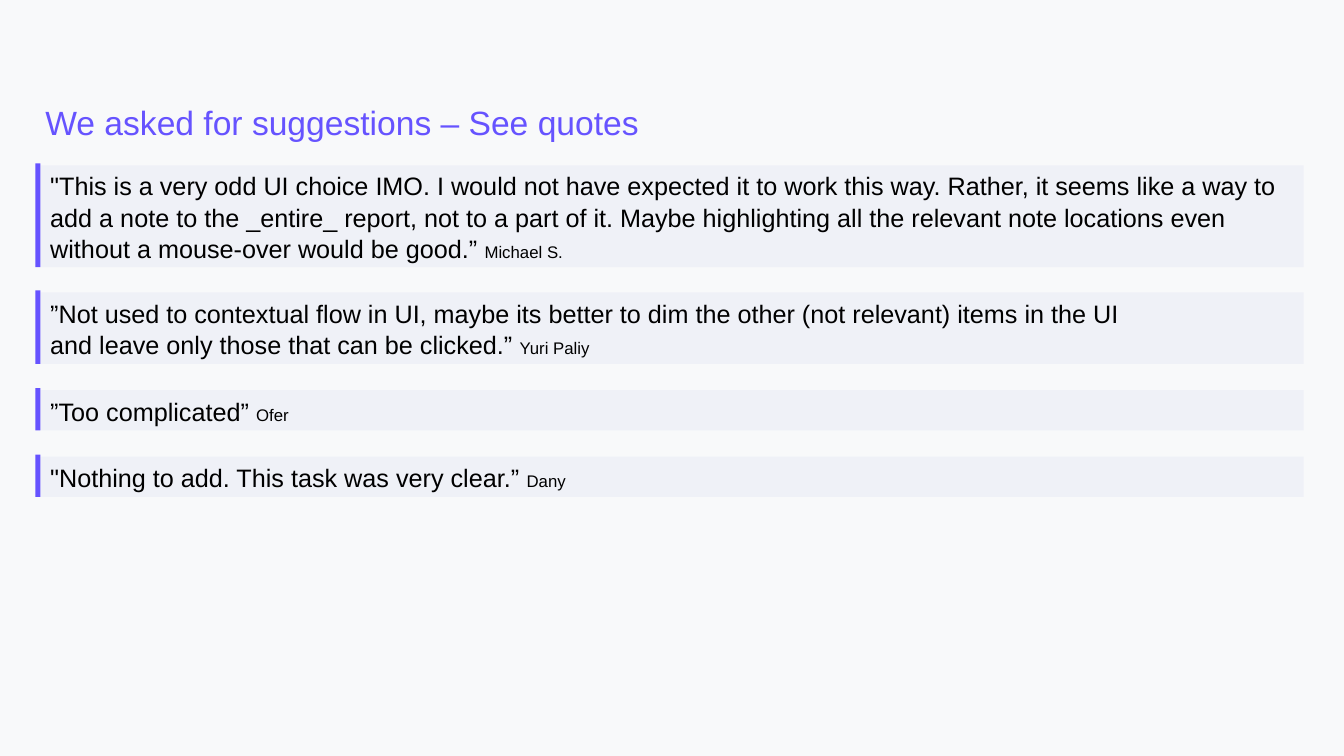
from lxml import etree
from pptx import Presentation
from pptx.dml.color import RGBColor
from pptx.enum.shapes import MSO_SHAPE
from pptx.enum.text import MSO_ANCHOR, MSO_AUTO_SIZE, PP_ALIGN
from pptx.oxml.ns import qn
from pptx.util import Inches, Pt

RECTANGLE = MSO_SHAPE.RECTANGLE
TOP, MIDDLE = MSO_ANCHOR.TOP, MSO_ANCHOR.MIDDLE
LEFT = PP_ALIGN.LEFT
NO_AUTOFIT = MSO_AUTO_SIZE.NONE
TITLE_ONLY = 5

COLOURS = {"background": "F8F9FA", "accent": "6653FF", "panel": "BEC6EA", "text": "000000"}
PANEL_LEFT, PANEL_WIDTH, PANEL_OPACITY = 0.4, 12.53, 15
BAR_WIDTH, BAR_RISE = 0.05, 0.02

QUOTES = [
    (1.64, 1.01, ['"This is a very odd UI choice IMO. I would not have expected it to work this way. '
                  'Rather, it seems like a way to add a note to the _entire_ report, not to a part of it. '
                  'Maybe highlighting all the relevant note locations even without a mouse-over '
                  'would be good.” '], "Michael S."),
    (2.9, 0.71, ["”Not used to contextual flow in UI, maybe its better to dim the other "
                 "(not relevant) items in the UI",
                 "and leave only those that can be clicked.” "], "Yuri Paliy"),
    (3.87, 0.4, ["”Too complicated” "], "Ofer"),
    (4.53, 0.4, ['"Nothing to add. This task was very clear.” '], "Dany"),
]


def add_text(paragraph, text, size=18, colour="text", font="Arial"):
    """Append a formatted run to a left-aligned paragraph."""
    paragraph.alignment = LEFT
    run = paragraph.add_run()
    run.text = text
    run.font.size = Pt(size)
    run.font.name = font
    run.font.color.rgb = RGBColor.from_string(COLOURS[colour])


def add_rectangle(shapes, left, top, width, height, colour, opacity=100):
    """Add a plain filled rectangle with an optional opacity in percent."""
    shape = shapes.add_shape(RECTANGLE, Inches(left), Inches(top), Inches(width), Inches(height))
    shape.shadow.inherit = False
    shape.line.fill.background()
    shape.fill.solid()
    shape.fill.fore_color.rgb = RGBColor.from_string(COLOURS[colour])
    if opacity < 100:
        colour_element = shape.fill._xPr.find(".//" + qn("a:srgbClr"))
        etree.SubElement(colour_element, qn("a:alpha"), val=str(opacity * 1000))
    return shape


def add_title(slide, text):
    """Fill and place the title placeholder."""
    title = slide.shapes.title
    title.left, title.top = Inches(0.4), Inches(0.96)
    title.width, title.height = Inches(8.16), Inches(1.26)
    frame = title.text_frame
    frame.auto_size = NO_AUTOFIT
    frame.vertical_anchor = TOP
    frame.margin_left = frame.margin_right = Inches(0.05)
    frame.margin_top = frame.margin_bottom = Inches(0.05)
    add_text(frame.paragraphs[0], text, size=24, colour="accent")


def add_quote(slide, top, height, lines, author):
    """Add a grouped quote panel with its accent bar."""
    shapes = slide.shapes.add_group_shape().shapes
    panel = add_rectangle(shapes, PANEL_LEFT, top, PANEL_WIDTH, height, "panel", PANEL_OPACITY)
    add_rectangle(shapes, PANEL_LEFT - BAR_WIDTH, top - BAR_RISE, BAR_WIDTH,
                  height + BAR_RISE, "accent")
    frame = panel.text_frame
    frame.word_wrap = True
    frame.vertical_anchor = MIDDLE
    for index, line in enumerate(lines):
        paragraph = frame.add_paragraph() if index else frame.paragraphs[0]
        paragraph.line_spacing = 1.05
        add_text(paragraph, line)
    add_text(paragraph, author, size=12)


def main():
    """Build the quotes slide and save it."""
    presentation = Presentation()
    presentation.slide_width, presentation.slide_height = Inches(13.33), Inches(7.5)
    slide = presentation.slides.add_slide(presentation.slide_layouts[TITLE_ONLY])
    slide.background.fill.solid()
    slide.background.fill.fore_color.rgb = RGBColor.from_string(COLOURS["background"])
    add_title(slide, "We asked for suggestions – See quotes")
    for quote in QUOTES:
        add_quote(slide, *quote)
    presentation.save("out.pptx")


if __name__ == "__main__":
    main()
